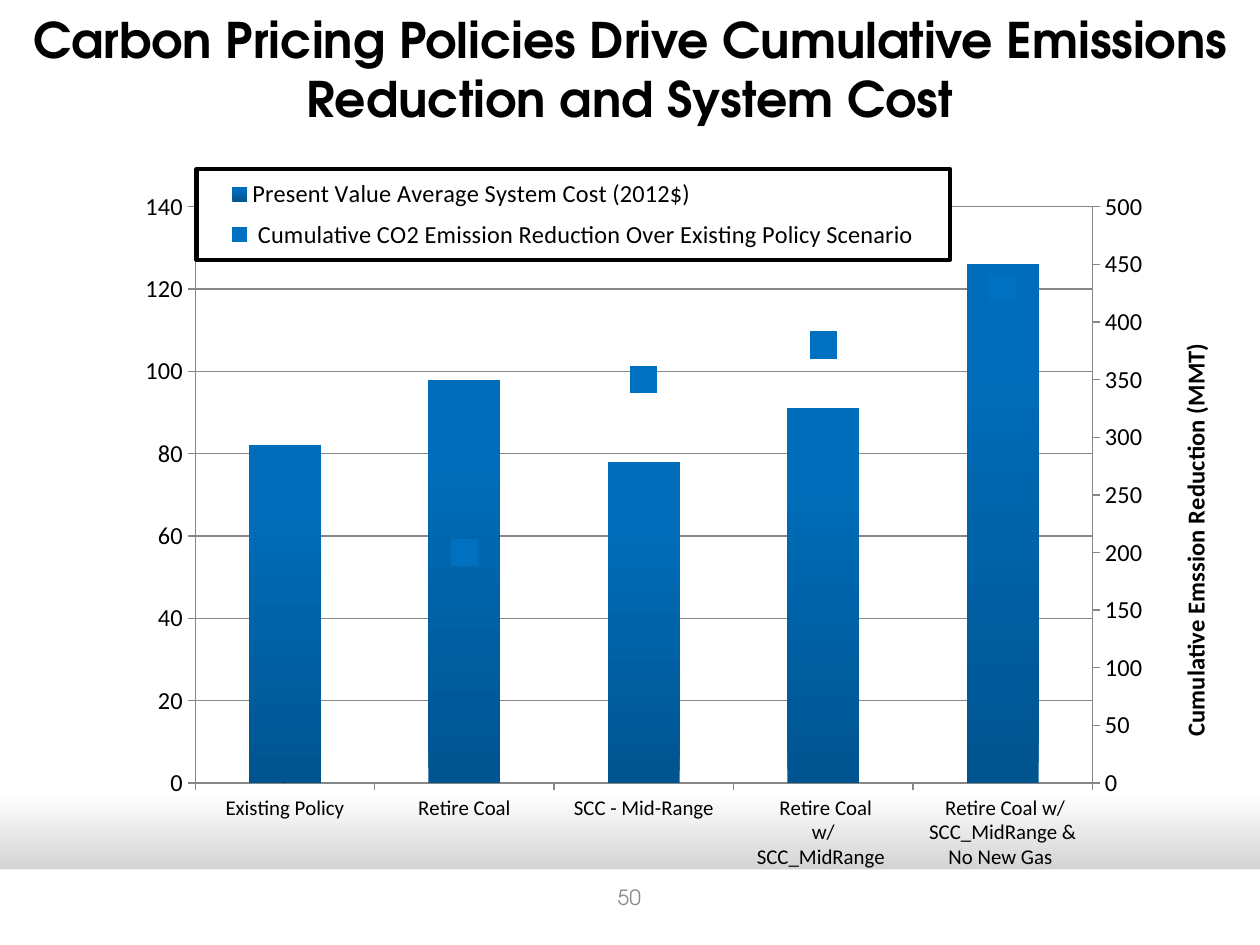
import copy

import pptx
import pptx.chart.axis
import pptx.chart.data
import pptx.dml.color
import pptx.enum.chart
import pptx.enum.shapes
import pptx.enum.text
import pptx.oxml
import pptx.oxml.ns
import pptx.util

COLORS = {
    "text": "000000", "page": "FFFFFF", "shade": "A6A6A6", "number": "8C8C8C",
    "bar_low": "00548F", "bar_high": "006DBA", "marker": "0070C0", "grid": "868686",
}
HEADING_FONT = "TeX Gyre Adventor"
CHART_FONT = "Calibri"
CATEGORIES = [
    "Existing Policy", "Retire Coal", "SCC - Mid-Range",
    " Retire Coal w/SCC_MidRange ", " Retire Coal w/SCC_MidRange & No New Gas ",
]
COST = ("Present Value Average System Cost (2012$) ", [82, 98, 78, 91, 126])
REDUCTION = (" Cumulative CO2 Emission Reduction Over Existing Policy Scenario",
             [0, 200, 350, 380, 430])
qn = pptx.oxml.ns.qn


def rgb(name):
    return pptx.dml.color.RGBColor.from_string(COLORS[name])


def style_font(font, name=CHART_FONT, size=14, color="text", bold=False):
    font.name = name
    font.size = pptx.util.Pt(size)
    font.bold = bold
    font.color.rgb = rgb(color)


def write(text_frame, text, **style):
    text_frame.text = text
    for paragraph in text_frame.paragraphs:
        paragraph.alignment = pptx.enum.text.PP_ALIGN.CENTER
        for run in paragraph.runs:
            style_font(run.font, **style)


def fade(fill, angle, stops):
    fill.gradient()
    fill.gradient_angle = angle
    for stop, (position, color) in zip(fill.gradient_stops, stops):
        stop.position = position
        stop.color.rgb = rgb(color)


def chart_xml(body):
    namespaces = pptx.oxml.ns.nsdecls("c", "a")
    opening, rest = body.split(">", 1)
    return pptx.oxml.parse_xml(f"{opening} {namespaces}>{rest}")


def place(element, index, inner=False, **shares):
    for layout in element.findall(qn("c:layout")):
        element.remove(layout)
    target = '<c:layoutTarget val="inner"/>' if inner else ""
    modes = "".join(f'<c:{key}Mode val="edge"/>' for key in "xy")
    values = "".join(f'<c:{key} val="{value}"/>' for key, value in shares.items())
    element.insert(index, chart_xml(
        f"<c:layout><c:manualLayout>{target}{modes}{values}</c:manualLayout></c:layout>"))


def add_secondary_line(chart):
    area = chart._chartSpace.find(".//" + qn("c:plotArea"))
    bars = area.find(qn("c:barChart"))
    series = bars.findall(qn("c:ser"))[1]
    for flag in series.findall(qn("c:invertIfNegative")):
        series.remove(flag)
    line = chart_xml(
        '<c:lineChart><c:grouping val="standard"/><c:varyColors val="0"/>'
        '<c:marker val="1"/><c:axId val="5001"/><c:axId val="5002"/></c:lineChart>')
    line.insert(2, series)
    bars.addnext(line)

    category = copy.deepcopy(area.find(qn("c:catAx")))
    value = copy.deepcopy(area.find(qn("c:valAx")))
    for axis, own, other in ((category, "5001", "5002"), (value, "5002", "5001")):
        axis.find(qn("c:axId")).set("val", own)
        axis.find(qn("c:crossAx")).set("val", other)
    value.find(qn("c:axPos")).set("val", "r")
    value.find(qn("c:crosses")).set("val", "max")
    area.find(qn("c:valAx")).addnext(value)
    value.addnext(category)
    pptx.chart.axis.CategoryAxis(category).visible = False
    return pptx.chart.axis.ValueAxis(value)


def format_axis(axis, size=14):
    axis.major_tick_mark = pptx.enum.chart.XL_TICK_MARK.OUTSIDE
    axis.minor_tick_mark = pptx.enum.chart.XL_TICK_MARK.NONE
    axis.format.line.color.rgb = rgb("grid")
    axis.format.line.width = pptx.util.Pt(0.75)
    style_font(axis.tick_labels.font, size=size)


def format_value_axis(axis, top, step, number_format, title, x, y):
    format_axis(axis)
    axis.minimum_scale, axis.maximum_scale, axis.major_unit = 0, top, step
    axis.tick_labels.number_format = number_format
    axis.tick_labels.number_format_is_linked = False
    frame = axis.axis_title.text_frame
    write(frame, title, bold=True)
    body = frame._txBody.find(qn("a:bodyPr"))
    body.set("rot", "-5400000")
    body.set("vert", "horz")
    place(axis.axis_title._element, 1, x=x, y=y)


def format_legend(chart):
    chart.has_legend = True
    legend = chart.legend
    legend.position = pptx.enum.chart.XL_LEGEND_POSITION.BOTTOM
    legend.include_in_layout = False
    style_font(legend.font)
    place(legend._element, 1, x=0.14, y=0.03, w=0.64, h=0.125)
    legend._element.find(qn("c:txPr")).addprevious(chart_xml(
        f'<c:spPr><a:solidFill><a:srgbClr val="{COLORS["page"]}"/></a:solidFill>'
        f'<a:ln w="31750"><a:solidFill><a:srgbClr val="{COLORS["text"]}"/></a:solidFill>'
        '</a:ln></c:spPr>'))


class SlideBuilder:
    def __init__(self, presentation):
        self.width = presentation.slide_width
        self.height = presentation.slide_height
        self.slide = presentation.slides.add_slide(presentation.slide_layouts[5])
        fade(self.slide.background.fill, 270, [(0.84, "page"), (1, "shade")])

    def box(self, left, top, width, height):
        return (int(left * self.width), int(top * self.height),
                int(width * self.width), int(height * self.height))

    def band(self, *shares):
        shape = self.slide.shapes.add_shape(
            pptx.enum.shapes.MSO_SHAPE.RECTANGLE, *self.box(*shares))
        shape.shadow.inherit = False
        shape.fill.solid()
        shape.fill.fore_color.rgb = rgb("page")
        shape.line.fill.background()

    def title(self, text, *shares):
        shape = self.slide.shapes.title
        shape.left, shape.top, shape.width, shape.height = self.box(*shares)
        shape.text_frame.vertical_anchor = pptx.enum.text.MSO_ANCHOR.MIDDLE
        write(shape.text_frame, text, name=HEADING_FONT, size=28, bold=True)

    def page_number(self, text, *shares):
        frame = self.slide.shapes.add_textbox(*self.box(*shares)).text_frame
        frame.word_wrap = True
        frame.vertical_anchor = pptx.enum.text.MSO_ANCHOR.MIDDLE
        write(frame, text, name=HEADING_FONT, size=12, color="number")

    def combined_chart(self, *shares):
        data = pptx.chart.data.CategoryChartData()
        data.categories = CATEGORIES
        for name, values in (COST, REDUCTION):
            data.add_series(name, values)
        chart = self.slide.shapes.add_chart(
            pptx.enum.chart.XL_CHART_TYPE.COLUMN_CLUSTERED, *self.box(*shares), data).chart
        chart.has_title = False
        style_font(chart.font)
        right_axis = add_secondary_line(chart)
        place(chart._chartSpace.find(".//" + qn("c:plotArea")), 0, inner=True,
              x=0.139, y=0.082, w=0.762, h=0.795)

        format_axis(chart.category_axis, size=12)
        format_value_axis(chart.value_axis, 140, 20, '"$"#,##0_);[Red]\\("$"#,##0\\)',
                          "Present Value System Cost\n(billion 2012$)", 0.01, 0.35)
        format_value_axis(right_axis, 500, 50, "General",
                          "Cumulative Emssion Reduction (MMT)", 0.97, 0.26)
        right_axis.has_major_gridlines = False
        gridline = chart.value_axis.major_gridlines.format.line
        gridline.color.rgb = rgb("grid")
        gridline.width = pptx.util.Pt(0.75)

        bars, markers = chart.plots
        bars.gap_width = 150
        bars.vary_by_categories = False
        fade(bars.series[0].format.fill, 90, [(0, "bar_low"), (0.8, "bar_high")])
        reduction = markers.series[0]
        reduction.smooth = False
        reduction.format.line.fill.background()
        reduction.marker.style = pptx.enum.chart.XL_MARKER_STYLE.SQUARE
        reduction.marker.size = 15
        reduction.marker.format.fill.solid()
        reduction.marker.format.fill.fore_color.rgb = rgb("marker")
        reduction.marker.format.line.fill.background()
        reduction.points[0].marker.style = pptx.enum.chart.XL_MARKER_STYLE.NONE
        format_legend(chart)


def main():
    presentation = pptx.Presentation()
    presentation.slide_width = pptx.util.Inches(10)
    presentation.slide_height = pptx.util.Inches(7.5)
    builder = SlideBuilder(presentation)
    builder.band(0, 0.92, 1, 0.08)
    builder.title("Carbon Pricing Policies Drive Cumulative Emissions Reduction and System Cost",
                  0, 0, 1, 0.144)
    builder.combined_chart(0.025, 0.156, 0.942, 0.767)
    builder.page_number("50", 0.383, 0.923, 0.233, 0.053)
    presentation.save("out.pptx")


if __name__ == "__main__":
    main()
